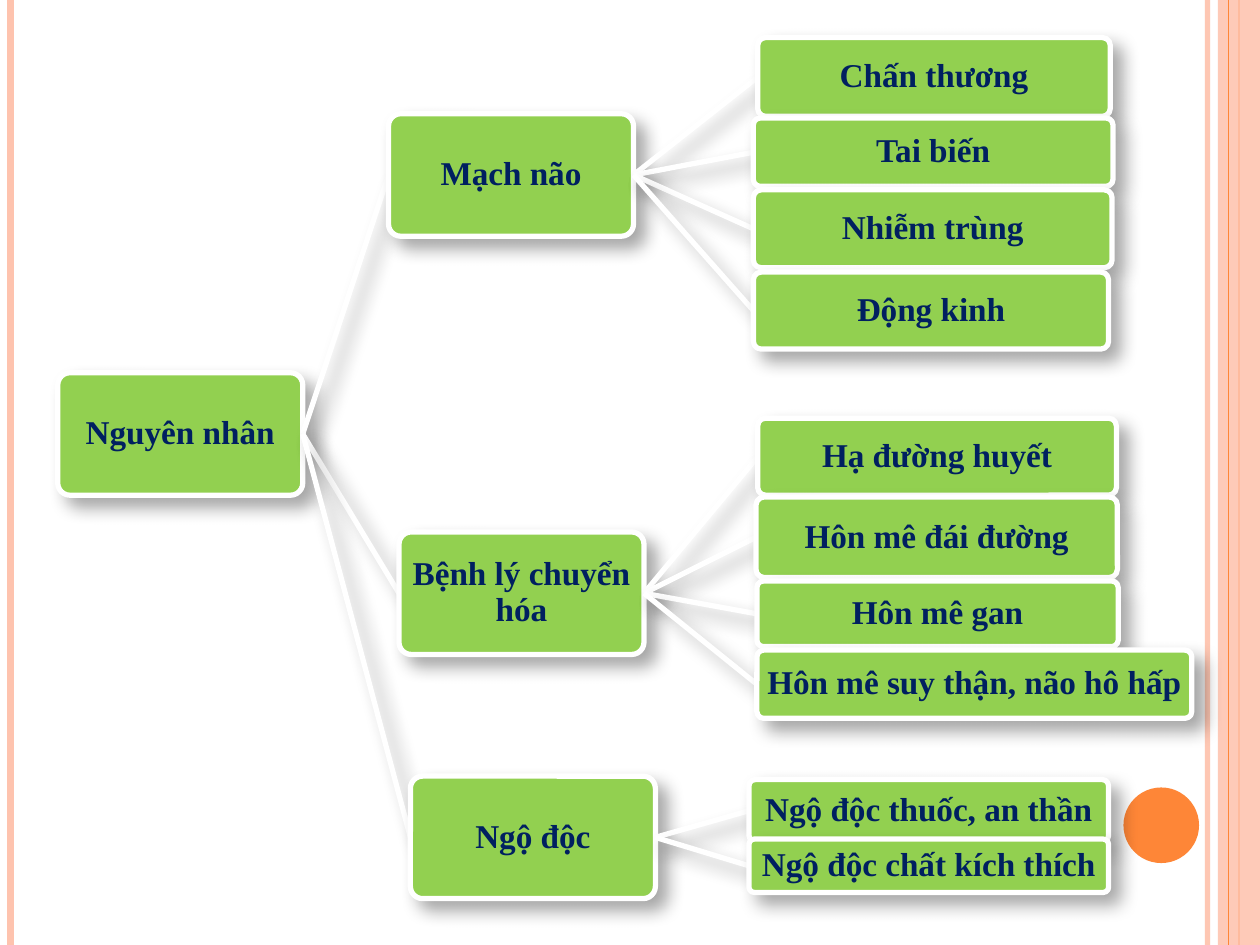
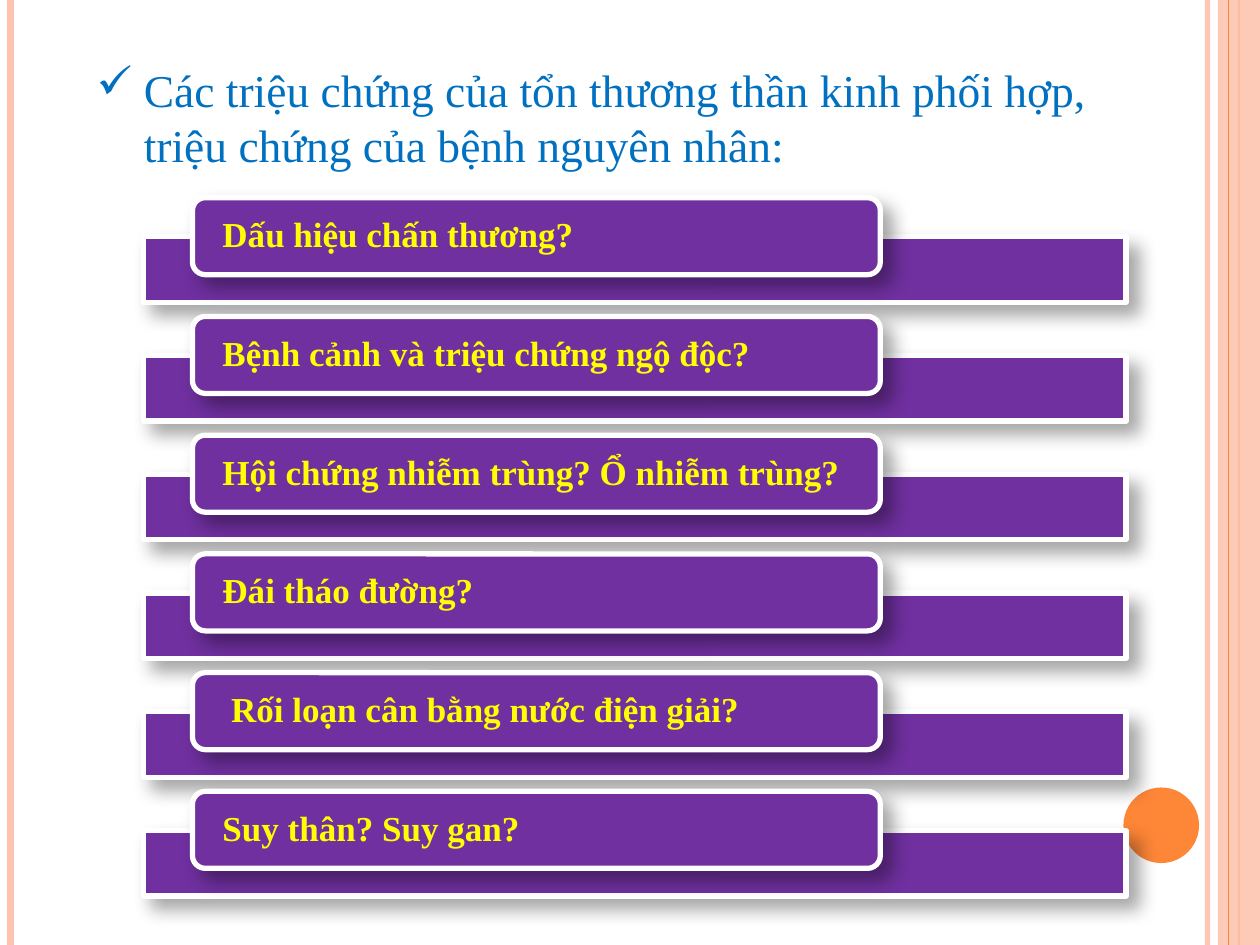
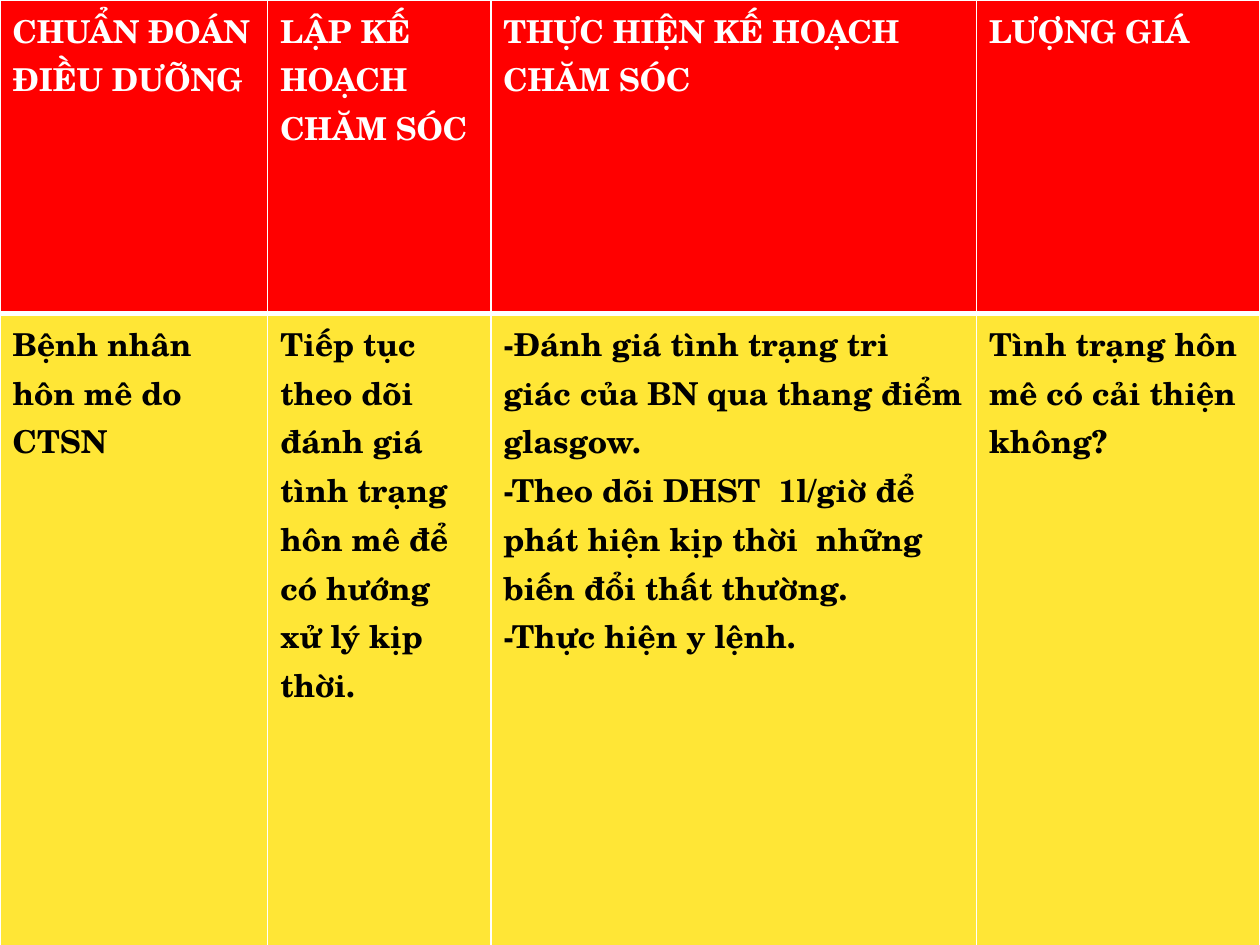
import pptx
import pptx.util
import pptx.dml.color
import pptx.enum.shapes
import pptx.enum.text
import pptx.oxml
import pptx.oxml.ns
from lxml import etree

Pt = pptx.util.Pt
KIND = pptx.enum.shapes.MSO_SHAPE
ALIGN = pptx.enum.text.PP_ALIGN
ANCHOR = pptx.enum.text.MSO_ANCHOR

INK = {
    "white": "FFFFFF", "black": "000000", "peach": "FEC3AE", "orange": "FE8637",
    "green": "92D050", "navy": "002060", "purple": "7030A0", "yellow": "FFFF00",
    "blue": "0070C0", "red": "FF0000", "gold": "FFE636",
}
SERIF = "Times New Roman"
SCHOLA = "TeX Gyre Schola"
WIDE, HIGH = 720, 540

ROOT = ("Nguyên nhân", (33, 213, 140, 70))
TREE = [
    ("Mạch não", (222, 65, 140, 70), [
        ("Chấn thương", (433, 21.5, 201.5, 45)),
        ("Tai biến", (430.5, 67.5, 205.5, 39)),
        ("Nhiễm trùng", (430.5, 108.5, 205, 44.5)),
        ("Động kinh", (430.5, 155.5, 203, 44)),
    ]),
    ("Bệnh lý chuyển hóa", (228, 304, 140, 70), [
        ("Hạ đường huyết", (433, 239, 205, 44)),
        ("Hôn mê đái đường", (432, 284, 206.5, 46)),
        ("Hôn mê gan", (432.5, 332, 206.5, 37.5)),
        ("Hôn mê suy thận, não hô hấp", (432.5, 371.5, 248.5, 39)),
    ]),
    ("Ngộ độc", (234.5, 443.5, 140, 70), [
        ("Ngộ độc thuốc, an thần", (428, 445.5, 205.5, 35.5)),
        ("Ngộ độc chất kích thích", (428, 479.5, 205.5, 30.5)),
    ]),
]

HEADING = "Các triệu chứng của tổn thương thần kinh phối hợp, triệu chứng của bệnh nguyên nhân:"
SIGNS = [
    "Dấu hiệu chấn thương?",
    "Bệnh cảnh và triệu chứng ngộ độc?",
    "Hội chứng nhiễm trùng? Ổ nhiễm trùng?",
    "Đái tháo đường?",
    " Rối loạn cân bằng nước điện giải?",
    "Suy thân? Suy gan?",
]

COLS = (153, 127.5, 277.5, 162)
ROWS = (179, 363)
PLAN = [
    ["CHUẨN ĐOÁN ĐIỀU DƯỠNG", "LẬP KẾ HOẠCH CHĂM SÓC",
     "THỰC HIỆN KẾ HOẠCH CHĂM SÓC", "LƯỢNG GIÁ"],
    ["Bệnh nhân hôn mê do CTSN",
     "Tiếp tục theo dõi đánh giá tình trạng hôn mê để có hướng xử lý kịp thời.",
     "-Đánh giá tình trạng tri giác của BN qua thang điểm glasgow.\n"
     "-Theo dõi DHST  1l/giờ để phát hiện kịp thời  những biến đổi thất thường.\n"
     "-Thực hiện y lệnh.",
     "Tình trạng hôn mê có cải thiện không?"],
]


def shade(name):
    """Return a named colour."""
    return pptx.dml.color.RGBColor.from_string(INK[name])


def style(part, **form):
    """Set each given format value on a part."""
    for key, value in form.items():
        setattr(part, key, value)


def ink(para, color, size, face=SERIF, bold=True):
    """Format the font of a paragraph."""
    style(para.font, name=face, size=Pt(size), bold=bold)
    para.font.color.rgb = shade(color)


def node(parent, tag, **attrs):
    """Add a drawing element with its attributes."""
    item = etree.SubElement(parent, pptx.oxml.ns.qn("a:" + tag))
    for key, value in attrs.items():
        item.set(key, str(value))
    return item


def fade(fill, alpha):
    """Give a solid fill element an opacity in percent."""
    node(fill.find(pptx.oxml.ns.qn("a:srgbClr")), "alpha", val=alpha * 1000)


def cast(shape, soft):
    """Set a soft shadow, or none."""
    list_ = node(shape.element.spPr, "effectLst")
    if soft:
        drop = node(list_, "outerShdw", blurRad=Pt(10.2), dist=Pt(8),
                    dir=45 * 60000, algn="tl", rotWithShape=0)
        tone = node(drop, "srgbClr", val=INK["black"])
        node(tone, "alpha", val=35000)


def block(slide, kind, box, color, edge=None):
    """Add a filled shape; an edge colour brings a soft shadow."""
    shape = slide.shapes.add_shape(kind, *map(Pt, box))
    shape.fill.solid()
    shape.fill.fore_color.rgb = shade(color)
    if edge:
        shape.line.color.rgb = shade(edge)
        shape.line.width = Pt(3)
    else:
        shape.line.fill.background()
    cast(shape, bool(edge))
    return shape


def rule(slide, start, end, color, width, soft=False):
    """Draw a straight line between two points."""
    line = slide.shapes.add_connector(
        pptx.enum.shapes.MSO_CONNECTOR.STRAIGHT, *map(Pt, (*start, *end)))
    line.line.color.rgb = shade(color)
    line.line.width = Pt(width)
    cast(line, soft)
    return line


def label(shape, text, color, size, align, side):
    """Write one line of bold text inside a shape."""
    frame = shape.text_frame
    style(frame, word_wrap=True, vertical_anchor=ANCHOR.MIDDLE,
          margin_left=Pt(side), margin_right=Pt(side),
          margin_top=Pt(0.7), margin_bottom=Pt(0.7))
    para = frame.paragraphs[0]
    para.text = text
    style(para, alignment=align, line_spacing=0.9)
    ink(para, color, size)


def frame(deck, slide):
    """Build the side bands and the disc, then move them to the master."""
    qn = pptx.oxml.ns.qn
    pale = rule(slide, (690, 0), (690, HIGH), "peach", 3)
    fade(pale.element.spPr.find(qn("a:ln")).find(qn("a:solidFill")), 93)
    rule(slide, (6, 0), (6, HIGH), "peach", 4.5)
    rule(slide, (708, 0), (708, HIGH), "orange", 1.5)
    band = block(slide, KIND.RECTANGLE, (696, 0, 24, HIGH), "peach")
    fade(band.element.spPr.find(qn("a:solidFill")), 87)
    rule(slide, (702, 0), (702, HIGH), "orange", 0.75)
    block(slide, KIND.OVAL, (642, 450, 43.2, 43.2), "orange")
    for count, shape in enumerate(list(slide.shapes), 20):
        shape.element.xpath(".//p:cNvPr")[0].set("id", str(count))
        deck.slide_master.shapes.element.append(shape.element)


def leaf(slide, text, box, source=None):
    """Add a tree box, joined to the box it stems from."""
    x, y, w, h = box
    if source:
        left, top, wide, high = source
        rule(slide, (left + wide, top + high / 2), (x, y + h / 2), "white", 3, True)
    shape = block(slide, KIND.ROUNDED_RECTANGLE, box, "green", "white")
    shape.adjustments[0] = 0.1
    label(shape, text, "navy", 19, ALIGN.CENTER, 0.7)


def causes(slide):
    """Draw the tree of causes."""
    leaf(slide, *ROOT)
    for name, box, twigs in TREE:
        leaf(slide, name, box, ROOT[1])
        for text, spot in twigs:
            leaf(slide, text, spot, box)


def title(slide, box):
    """Place the ticked heading."""
    head = slide.shapes.title
    style(head, **dict(zip(("left", "top", "width", "height"), map(Pt, box))))
    style(head.text_frame, word_wrap=True, vertical_anchor=ANCHOR.TOP,
          auto_size=pptx.enum.text.MSO_AUTO_SIZE.NONE)
    para = head.text_frame.paragraphs[0]
    para.text = HEADING
    para.alignment = ALIGN.LEFT
    prop = para._p.get_or_add_pPr()
    style_ = {"marL": Pt(27), "indent": -Pt(27)}
    for key, value in style_.items():
        prop.set(key, str(value))
    node(prop, "buChar", char="✓")
    ink(para, "blue", 26, bold=False)


def signs(slide, box, step):
    """Stack the bars, each with its question tab."""
    x, y, w, h = box
    for row, text in enumerate(SIGNS):
        top = y + row * step
        block(slide, KIND.RECTANGLE, (x, top + 22.3, w, 37.5), "purple", "white")
        tab = block(slide, KIND.ROUNDED_RECTANGLE, (x + 28, top, w * 0.7, h),
                    "purple", "white")
        label(tab, text, "yellow", 20, ALIGN.LEFT, 15)


def border(cell, **widths):
    """Draw white cell borders of the given widths."""
    prop = cell._tc.get_or_add_tcPr()
    for side, width in widths.items():
        line = node(prop, "ln" + side, w=Pt(width))
        node(node(line, "solidFill"), "srgbClr", val=INK["white"])


def plan(slide, box):
    """Build the care plan table."""
    table = slide.shapes.add_table(len(ROWS), len(COLS), *map(Pt, box)).table
    table.horz_banding = False
    for col, width in zip(table.columns, COLS):
        col.width = Pt(width)
    for row, height in zip(table.rows, ROWS):
        row.height = Pt(height)
    looks = [("red", "white", dict(L=1, R=1, T=1, B=3)),
             ("gold", "black", dict(L=1, R=1, T=3, B=1))]
    for row, texts, (back, color, edges) in zip(table.rows, PLAN, looks):
        for cell, text in zip(row.cells, texts):
            border(cell, **edges)
            cell.fill.solid()
            cell.fill.fore_color.rgb = shade(back)
            cell.text = text
            for para in cell.text_frame.paragraphs:
                ink(para, color, 18, SCHOLA)


def main():
    """Build and save the three slides."""
    deck = pptx.Presentation()
    style(deck, slide_width=Pt(WIDE), slide_height=Pt(HIGH))
    only, blank = deck.slide_layouts[5], deck.slide_layouts[6]
    first = deck.slides.add_slide(blank)
    frame(deck, first)
    causes(first)
    second = deck.slides.add_slide(only)
    title(second, (48, 32, 629, 101))
    signs(second, (82, 113, 561.5, 44), 67.85)
    plan(deck.slides.add_slide(blank), (0, 0, WIDE, sum(ROWS)))
    deck.save("out.pptx")


if __name__ == "__main__":
    main()
